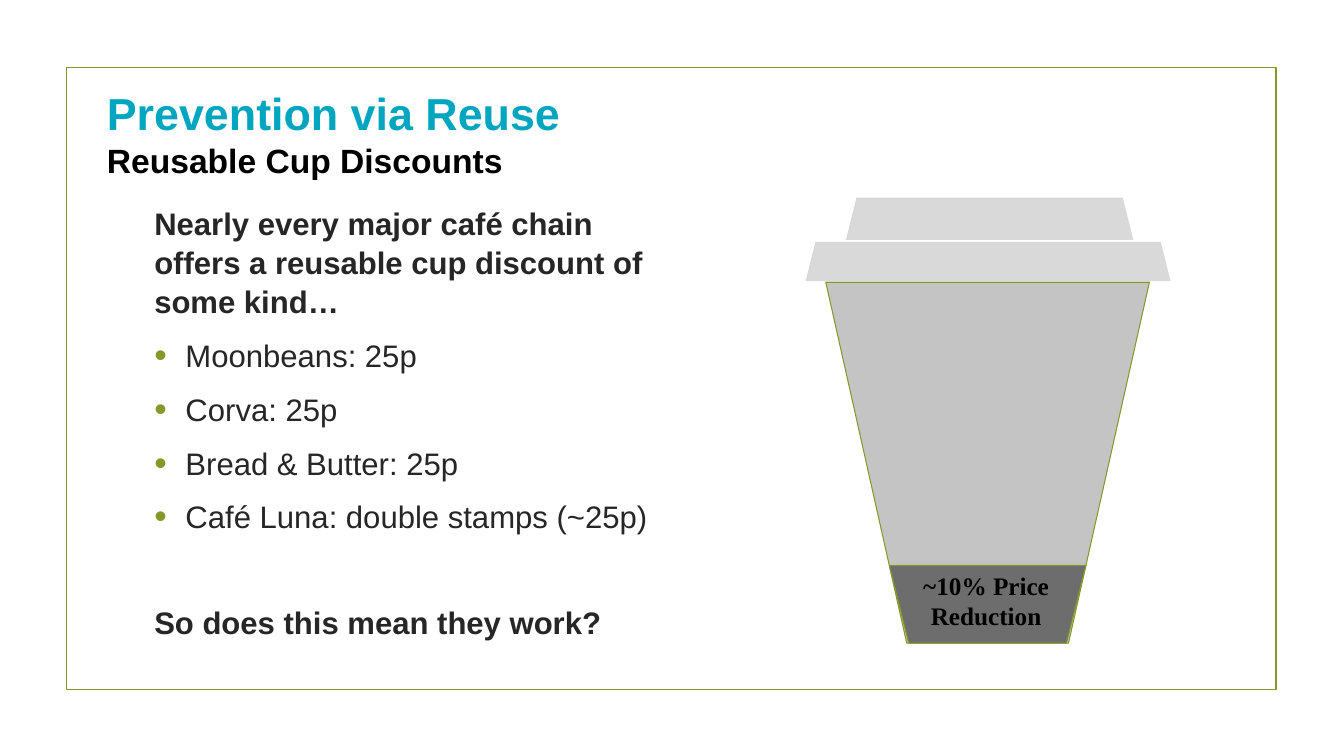
from lxml.etree import SubElement
from pptx import Presentation
from pptx.dml.color import RGBColor
from pptx.enum.shapes import MSO_SHAPE
from pptx.enum.text import MSO_ANCHOR, MSO_AUTO_SIZE, PP_ALIGN
from pptx.oxml.ns import qn
from pptx.util import Inches, Pt

COLORS = {
    "olive": "83992A",
    "teal": "00A6BF",
    "black": "000000",
    "body": "262626",
    "cup": "C4C4C4",
    "lid": "D9D9D9",
    "fill_level": "6D6D6D",
}


def style_text(paragraph, font_name, size, color, bold):
    for run in paragraph.runs:
        run.font.name = font_name
        run.font.size = Pt(size)
        run.font.bold = bold
        run.font.color.rgb = RGBColor.from_string(COLORS[color])


def add_outline(kind, left, top, width, height, fill, line_width):
    outline = slide.shapes.add_shape(
        kind, Inches(left), Inches(top), Inches(width), Inches(height))
    outline.shadow.inherit = False
    if fill:
        outline.fill.solid()
        outline.fill.fore_color.rgb = RGBColor.from_string(COLORS[fill])
    else:
        outline.fill.background()
    if line_width:
        outline.line.color.rgb = RGBColor.from_string(COLORS["olive"])
        outline.line.width = Pt(line_width)
    else:
        outline.line.fill.background()
    return outline


prs = Presentation()
prs.slide_width = Inches(13.33)
prs.slide_height = Inches(7.5)
slide = prs.slides.add_slide(prs.slide_layouts[1])

add_outline(MSO_SHAPE.RECTANGLE, 0.66, 0.67, 12, 6.17, None, 1.25)

heading = slide.shapes.title
heading.left, heading.top = Inches(0.96), Inches(1.03)
heading.width, heading.height = Inches(9), Inches(0.58)
heading.text_frame.text = "Prevention via Reuse\nReusable Cup Discounts"
heading.text_frame.auto_size = MSO_AUTO_SIZE.NONE
heading.text_frame.vertical_anchor = MSO_ANCHOR.MIDDLE
heading_styles = [(32, "teal"), (24, "black")]
for paragraph, (size, color) in zip(heading.text_frame.paragraphs, heading_styles):
    paragraph.alignment = PP_ALIGN.LEFT
    style_text(paragraph, "Arial", size, color, True)

discounts = slide.placeholders[1]
discounts.left, discounts.top = Inches(1.43), Inches(1.96)
discounts.width, discounts.height = Inches(5.12), Inches(4.48)
discounts.text_frame.text = "\n".join([
    "Nearly every major café chain offers a reusable cup discount of some kind…",
    "Moonbeans: 25p",
    "Corva: 25p",
    "Bread & Butter: 25p",
    "Café Luna: double stamps (~25p)",
    "So does this mean they work?",
])
discounts.text_frame.auto_size = MSO_AUTO_SIZE.NONE
last = len(discounts.text_frame.paragraphs) - 1
for index, paragraph in enumerate(discounts.text_frame.paragraphs):
    is_statement = index in (0, last)
    paragraph.line_spacing = 1.05
    paragraph.space_before = Pt({0: 0, last: 41.6}.get(index, 4.4))
    paragraph.space_after = Pt(6)
    properties = paragraph._p.get_or_add_pPr()
    indent = 0 if is_statement else Inches(0.31)
    properties.set("marL", str(indent))
    properties.set("indent", str(-indent))
    if is_statement:
        SubElement(properties, qn("a:buNone"))
    else:
        bullet_color = SubElement(properties, qn("a:buClr"))
        SubElement(bullet_color, qn("a:srgbClr"), val=COLORS["olive"])
        SubElement(properties, qn("a:buSzPct"), val="115000")
        SubElement(properties, qn("a:buFont"), typeface="Arial")
        SubElement(properties, qn("a:buChar"), char="•")
    style_text(paragraph, "Arial", 22.2, "body", is_statement)

cup_parts = [
    (8.19, 2.8, 3.21, 3.58, "cup", 0.75, 180),
    (7.99, 2.4, 3.62, 0.39, "lid", None, 0),
    (8.39, 1.96, 2.85, 0.42, "lid", None, 0),
    (8.82, 5.61, 1.95, 0.77, "fill_level", 0.75, 180),
]
for left, top, width, height, fill, line_width, rotation in cup_parts:
    cup_part = add_outline(
        MSO_SHAPE.TRAPEZOID, left, top, width, height, fill, line_width)
    cup_part.adjustments[0] = 0.25
    cup_part.rotation = rotation

reduction = slide.shapes.add_textbox(
    Inches(9.02), Inches(5.61), Inches(1.52), Inches(0.71))
reduction.text_frame.word_wrap = True
reduction.text_frame.text = "~10% Price Reduction"
reduction_line = reduction.text_frame.paragraphs[0]
reduction_line.alignment = PP_ALIGN.CENTER
style_text(reduction_line, "Times New Roman", 18, "black", True)

prs.save("out.pptx")
